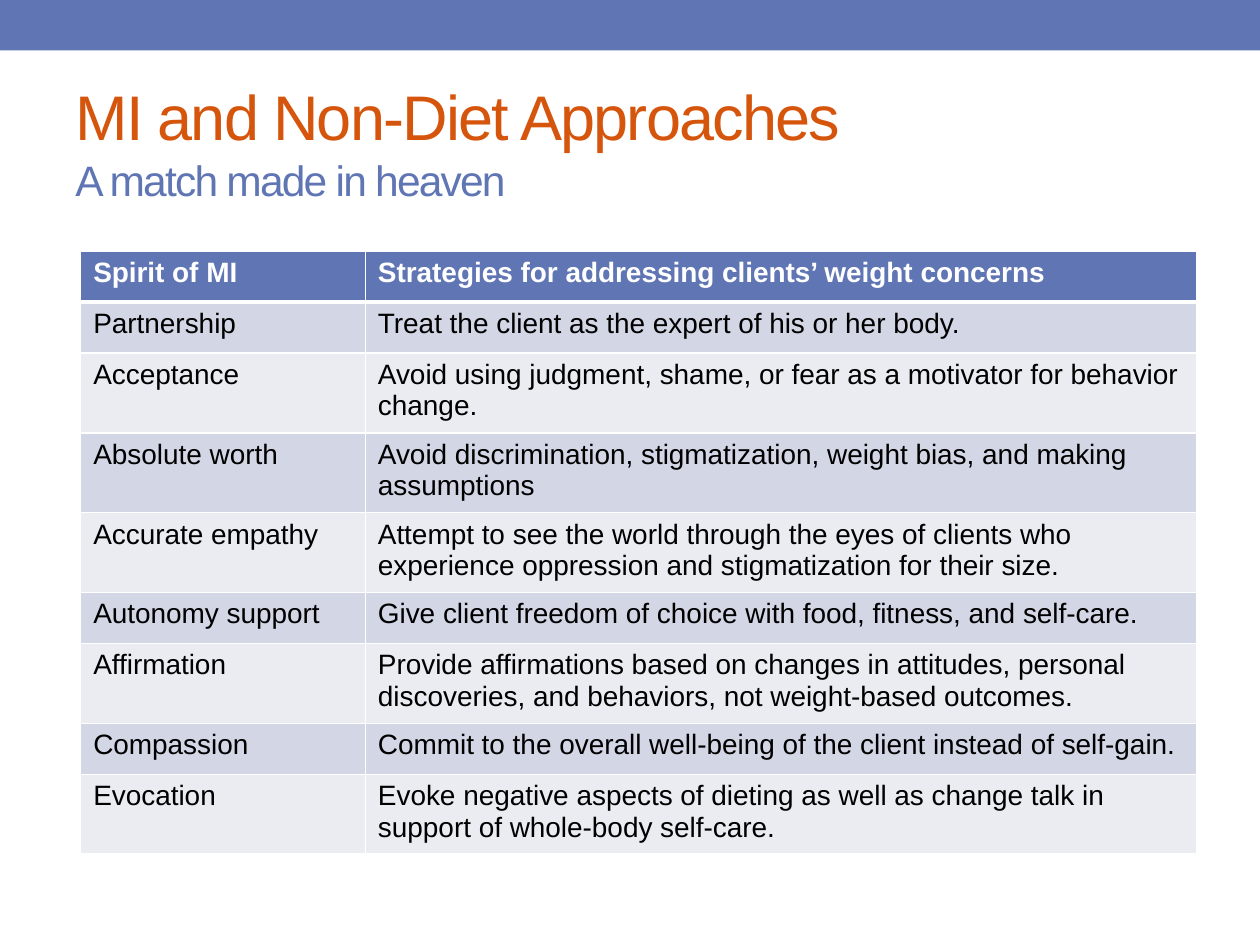
from typing import NamedTuple

from lxml import etree
from pptx import Presentation
from pptx.dml.color import RGBColor
from pptx.enum import shapes, text
from pptx.oxml import ns
from pptx.util import Pt

BLUE, ORANGE, WHITE, BLACK = "6076B4", "D6550D", "FFFFFF", "000000"
BANDS = ("D2D6E5", "EAECF2")
COLUMN_WIDTHS = (162.7, 475.2)
ROW_HEIGHT = 29.2


class Principle(NamedTuple):
    spirit: str
    strategy: str


HEADING = Principle("Spirit of MI", "Strategies for addressing clients’ weight concerns")
PRINCIPLES = (
    Principle("Partnership", "Treat the client as the expert of his or her body."),
    Principle("Acceptance", "Avoid using judgment, shame, or fear as a motivator for behavior change."),
    Principle("Absolute worth", "Avoid discrimination, stigmatization, weight bias, and making assumptions"),
    Principle("Accurate empathy", "Attempt to see the world through the eyes of clients who "
              "experience oppression and stigmatization for their size."),
    Principle("Autonomy support", "Give client freedom of choice with food, fitness, and self-care."),
    Principle("Affirmation", "Provide affirmations based on changes in attitudes, personal "
              "discoveries, and behaviors, not weight-based outcomes."),
    Principle("Compassion", "Commit to the overall well-being of the client instead of self-gain."),
    Principle("Evocation", "Evoke negative aspects of dieting as well as change talk in "
              "support of whole-body self-care."),
)


def paint(fill, color: str) -> None:
    fill.solid()
    fill.fore_color.rgb = RGBColor.from_string(color)


def write(paragraph, words: str, *, size: float, color: str,
          bold: bool = False, tracking: float = 0) -> None:
    run = paragraph.add_run()
    run.text = words
    run.font.name = "Arial"
    run.font.size = Pt(size)
    run.font.bold = bold
    paint(run.font.fill, color)
    if tracking:
        run.font._element.set("spc", str(round(tracking * 100)))


def add_borders(cell, **widths: float) -> None:
    """Draw white cell borders, given as side=width, ahead of the cell fill."""
    properties = cell._tc.get_or_add_tcPr()
    for index, side in enumerate(("L", "R", "T", "B")):
        line = etree.Element(ns.qn(f"a:ln{side}"), w=str(Pt(widths.get(side, 1))))
        solid = etree.SubElement(line, ns.qn("a:solidFill"))
        etree.SubElement(solid, ns.qn("a:srgbClr"), val=WHITE)
        properties.insert(index, line)


def add_band(slide, width: int) -> None:
    band = slide.shapes.add_shape(shapes.MSO_SHAPE.RECTANGLE, 0, 0, width, Pt(28.8))
    band.shadow.inherit = False
    paint(band.fill, BLUE)
    band.line.fill.background()


def add_title(slide) -> None:
    frame = slide.shapes.add_textbox(Pt(36), Pt(41.8), Pt(648), Pt(77.8)).text_frame
    frame.word_wrap = True
    frame.vertical_anchor = text.MSO_ANCHOR.MIDDLE
    heading = frame.paragraphs[0]
    write(heading, "MI and Non-Diet Approaches", size=36, color=ORANGE, tracking=-1)
    heading.add_line_break()
    write(heading, "A match made in heaven", size=24.3, color=BLUE, tracking=-1)


def add_principles(slide) -> None:
    rows = (HEADING, *PRINCIPLES)
    table = slide.shapes.add_table(
        len(rows), len(COLUMN_WIDTHS), Pt(46.1), Pt(143.3),
        Pt(sum(COLUMN_WIDTHS)), Pt(ROW_HEIGHT * len(rows))).table
    for column, width in zip(table.columns, COLUMN_WIDTHS):
        column.width = Pt(width)
    for number, principle in enumerate(rows):
        table.rows[number].height = Pt(ROW_HEIGHT)
        is_heading = number == 0
        for column, words in enumerate(principle):
            cell = table.cell(number, column)
            paint(cell.fill, BLUE if is_heading else BANDS[(number - 1) % 2])
            add_borders(cell, T=3 if number == 1 else 1, B=3 if is_heading else 1)
            write(cell.text_frame.paragraphs[0], words, size=16,
                  color=WHITE if is_heading else BLACK, bold=is_heading)


def main() -> None:
    deck = Presentation()
    deck.slide_width, deck.slide_height = Pt(720), Pt(540)
    slide = deck.slides.add_slide(deck.slide_layouts[6])

    # Top band and title
    add_band(slide, deck.slide_width)
    add_title(slide)

    # Table of principles and strategies
    add_principles(slide)

    deck.save("out.pptx")


if __name__ == "__main__":
    main()
